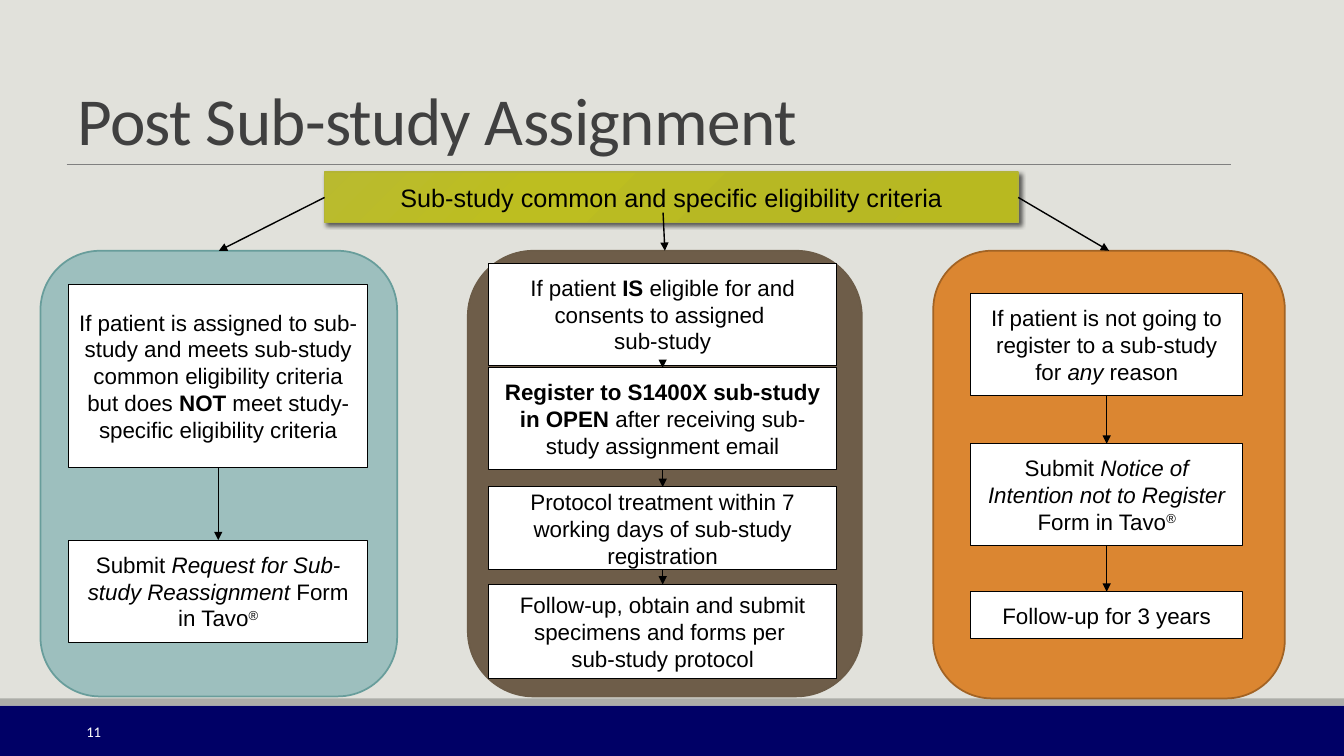
"""Build the post sub-study assignment flow chart slide."""
from dataclasses import dataclass, field

import pptx
import pptx.dml.color
import pptx.enum.shapes
import pptx.enum.text
import pptx.oxml
import pptx.oxml.ns
import pptx.util
from lxml import etree

Cm = pptx.util.Cm
Pt = pptx.util.Pt
RGBColor = pptx.dml.color.RGBColor
MSO_SHAPE = pptx.enum.shapes.MSO_SHAPE
MSO_ANCHOR = pptx.enum.text.MSO_ANCHOR
PP_ALIGN = pptx.enum.text.PP_ALIGN
qn = pptx.oxml.ns.qn

BLACK = RGBColor(0x00, 0x00, 0x00)
WHITE = RGBColor(0xFF, 0xFF, 0xFF)
PAPER = RGBColor(0xE1, 0xE1, 0xDB)
NAVY = RGBColor(0x00, 0x00, 0x66)
SILVER = RGBColor(0xAC, 0xAD, 0xA8)
GREY = RGBColor(0x80, 0x80, 0x80)
CHARCOAL = RGBColor(0x40, 0x40, 0x40)
OLIVE = RGBColor(0xB3, 0xB4, 0x35)
TEAL = RGBColor(0x9D, 0xBF, 0xBE)
TEAL_EDGE = RGBColor(0x68, 0x9D, 0x9B)
BROWN = RGBColor(0x6E, 0x5D, 0x49)
BROWN_EDGE = RGBColor(0x6C, 0x5C, 0x48)
ORANGE = RGBColor(0xDB, 0x86, 0x31)
ORANGE_EDGE = RGBColor(0xA2, 0x63, 0x24)

BAR_STOPS = ((0, "B8B920"), (34, "B7B823"), (70, "BDBE20"), (100, "B9BA2F"))
BODY_FONT = {"name": "Arial", "size": Pt(16)}
BREAK = "\v"
PANEL_TOP = 6.32


@dataclass
class Run:
    text: str
    style: dict = field(default_factory=dict)
    raised: bool = False


@dataclass
class Step:
    top: float
    height: float
    paragraphs: list[list[Run]]


@dataclass
class Panel:
    left: float
    width: float
    height: float
    fill: RGBColor
    edge: RGBColor
    step_left: float
    step_width: float
    arrow_pt: float
    steps: list[Step]


BOLD = {"bold": True}
ITALIC = {"italic": True}
FORM_SYSTEM = [Run(" Form in Tavo"), Run("®", raised=True)]

PANELS = [
    Panel(1.02, 8.99, 11.23, TEAL, TEAL_EDGE, 1.73, 7.54, 1, [
        Step(7.16, 4.62, [[
            Run("If patient is assigned to sub-study and meets sub-study "
                "common eligibility criteria but does "),
            Run("NOT", BOLD), Run(" meet study-specific eligibility criteria")]]),
        Step(13.61, 2.57, [[
            Run("Submit "), Run("Request for Sub-study Reassignment", ITALIC),
            *FORM_SYSTEM]]),
    ]),
    Panel(11.79, 9.93, 11.23, BROWN, BROWN_EDGE, 12.32, 8.76, 0.75, [
        Step(6.63, 2.57, [[
            Run("If patient "), Run("IS", BOLD),
            Run(" eligible for and consents to assigned "),
            Run(BREAK), Run("sub-study")]]),
        Step(9.27, 2.57, [[
            Run("Register to S1400X sub-study in OPEN ", BOLD),
            Run("after receiving sub-study assignment email")]]),
        Step(12.27, 2.08, [[
            Run("Protocol treatment within 7 working days of sub-study registration")]]),
        Step(14.73, 2.36, [
            [Run("Follow-up, obtain and submit specimens and forms per ")],
            [Run("sub-study protocol")]]),
    ]),
    Panel(23.52, 8.86, 11.28, ORANGE, ORANGE_EDGE, 24.46, 6.86, 1, [
        Step(7.39, 2.57, [[
            Run("If patient is not going to register to a sub-study for "),
            Run("any", ITALIC), Run(" reason")]]),
        Step(11.18, 2.57, [[
            Run("Submit "), Run("Notice of Intention not to Register", ITALIC),
            *FORM_SYSTEM]]),
        Step(14.91, 1.19, [[Run("Follow-up for 3 years")]]),
    ]),
]


def apply(target, formats: dict) -> None:
    for name, value in formats.items():
        setattr(target, name, value)


def write(sp, paragraphs: list[list[Run]], font: dict, color: RGBColor,
          align: PP_ALIGN = PP_ALIGN.CENTER,
          anchor: MSO_ANCHOR = MSO_ANCHOR.MIDDLE) -> None:
    tf = sp.text_frame
    apply(tf, {"word_wrap": True, "vertical_anchor": anchor,
               "auto_size": pptx.enum.text.MSO_AUTO_SIZE.NONE})
    for i, runs in enumerate(paragraphs):
        p = tf.add_paragraph() if i else tf.paragraphs[0]
        p.alignment = align
        for run in runs:
            if run.text == BREAK:
                p.add_line_break()
                continue
            r = p.add_run()
            r.text = run.text
            apply(r.font, {**font, **run.style})
            r.font.color.rgb = color
            if run.raised:
                r.font._element.set("baseline", "30000")


def add_box(s, kind: MSO_SHAPE, left: float, top: float, width: float,
            height: float, fill: RGBColor, edge: RGBColor | None = None,
            edge_pt: float = 0.75):
    sp = s.shapes.add_shape(kind, Cm(left), Cm(top), Cm(width), Cm(height))
    sp.shadow.inherit = False
    sp.fill.solid()
    sp.fill.fore_color.rgb = fill
    if edge is None:
        sp.line.fill.background()
    else:
        sp.line.color.rgb = edge
        sp.line.width = Pt(edge_pt)
    return sp


def add_line(s, x1: float, y1: float, x2: float, y2: float,
             color: RGBColor, width_pt: float, arrow: bool = True):
    line = s.shapes.add_connector(pptx.enum.shapes.MSO_CONNECTOR.STRAIGHT,
                                  Cm(x1), Cm(y1), Cm(x2), Cm(y2))
    line.line.color.rgb = color
    line.line.width = Pt(width_pt)
    if arrow:
        etree.SubElement(line.line._get_or_add_ln(), qn("a:tailEnd"), type="triangle")
    etree.SubElement(line._element.spPr, qn("a:effectLst"))
    return line


def join(s, start, start_side: int, end, width_pt: float) -> None:
    line = add_line(s, 0, 0, 1, 1, BLACK, width_pt)
    line.begin_connect(start, start_side)
    line.end_connect(end, 0)


def add_bar(s):
    sp = add_box(s, MSO_SHAPE.RECTANGLE, 8.18, 4.34, 17.48, 1.27, OLIVE, OLIVE, 1)
    stops = "".join(f'<a:gs pos="{pos * 1000}"><a:srgbClr val="{color}"/></a:gs>'
                    for pos, color in BAR_STOPS)
    ns = pptx.oxml.ns.nsdecls("a")
    spPr = sp._element.spPr
    spPr.replace(spPr.find(qn("a:solidFill")), pptx.oxml.parse_xml(
        f'<a:gradFill {ns} rotWithShape="1"><a:gsLst>{stops}</a:gsLst><a:path path="circle">'
        '<a:fillToRect l="100000" t="100000"/></a:path></a:gradFill>'))
    spPr.find(qn("a:effectLst")).append(pptx.oxml.parse_xml(
        f'<a:outerShdw {ns} blurRad="38100" dist="25400" dir="2700000">'
        '<a:srgbClr val="000000"><a:alpha val="60000"/></a:srgbClr></a:outerShdw>'))
    write(sp, [[Run("Sub-study common and specific eligibility criteria")]],
          {**BODY_FONT, "size": Pt(18)}, BLACK)
    return sp


def add_panel(s, panel: Panel):
    sp = add_box(s, MSO_SHAPE.ROUNDED_RECTANGLE, panel.left, PANEL_TOP, panel.width,
                 panel.height, panel.fill, panel.edge, 1.25)
    previous = None
    for step in panel.steps:
        box = add_box(s, MSO_SHAPE.RECTANGLE, panel.step_left, step.top,
                      panel.step_width, step.height, WHITE, BLACK)
        write(box, step.paragraphs, BODY_FONT, BLACK)
        if previous is not None:
            join(s, previous, 2, box, panel.arrow_pt)
        previous = box
    return sp


def main() -> None:
    prs = pptx.Presentation()
    apply(prs, {"slide_width": Cm(33.87), "slide_height": Cm(19.05)})
    s = prs.slides.add_slide(prs.slide_layouts[5])
    s.background.fill.solid()
    s.background.fill.fore_color.rgb = PAPER

    add_box(s, MSO_SHAPE.RECTANGLE, 0, 17.78, 33.87, 1.27, NAVY)
    add_box(s, MSO_SHAPE.RECTANGLE, 0, 17.6, 33.87, 0.18, SILVER)
    add_line(s, 1.68, 4.14, 31.01, 4.14, GREY, 0.5, arrow=False)

    title = s.shapes.title
    apply(title, {"left": Cm(1.7), "top": Cm(0.1), "width": Cm(29.29), "height": Cm(4.04)})
    write(title, [[Run("Post Sub-study Assignment")]],
          {"name": "Calibri", "size": Pt(48)}, CHARCOAL, PP_ALIGN.LEFT, MSO_ANCHOR.BOTTOM)
    p = title.text_frame.paragraphs[0]
    p.line_spacing = 0.85
    p.runs[0].font._element.set("spc", "-50")

    bar = add_bar(s)
    left, middle, right = [add_panel(s, panel) for panel in PANELS]
    join(s, bar, 1, left, 1)
    join(s, bar, 3, right, 1)
    add_line(s, 16.71, 5.36, 16.76, PANEL_TOP, BLACK, 1).end_connect(middle, 0)

    number = s.shapes.add_textbox(Cm(0.18), Cm(17.93), Cm(2.62), Cm(1.02))
    write(number, [[Run("11")]], {"name": "Calibri", "size": Pt(10.5)}, WHITE, PP_ALIGN.RIGHT)
    prs.save("out.pptx")


if __name__ == "__main__":
    main()
